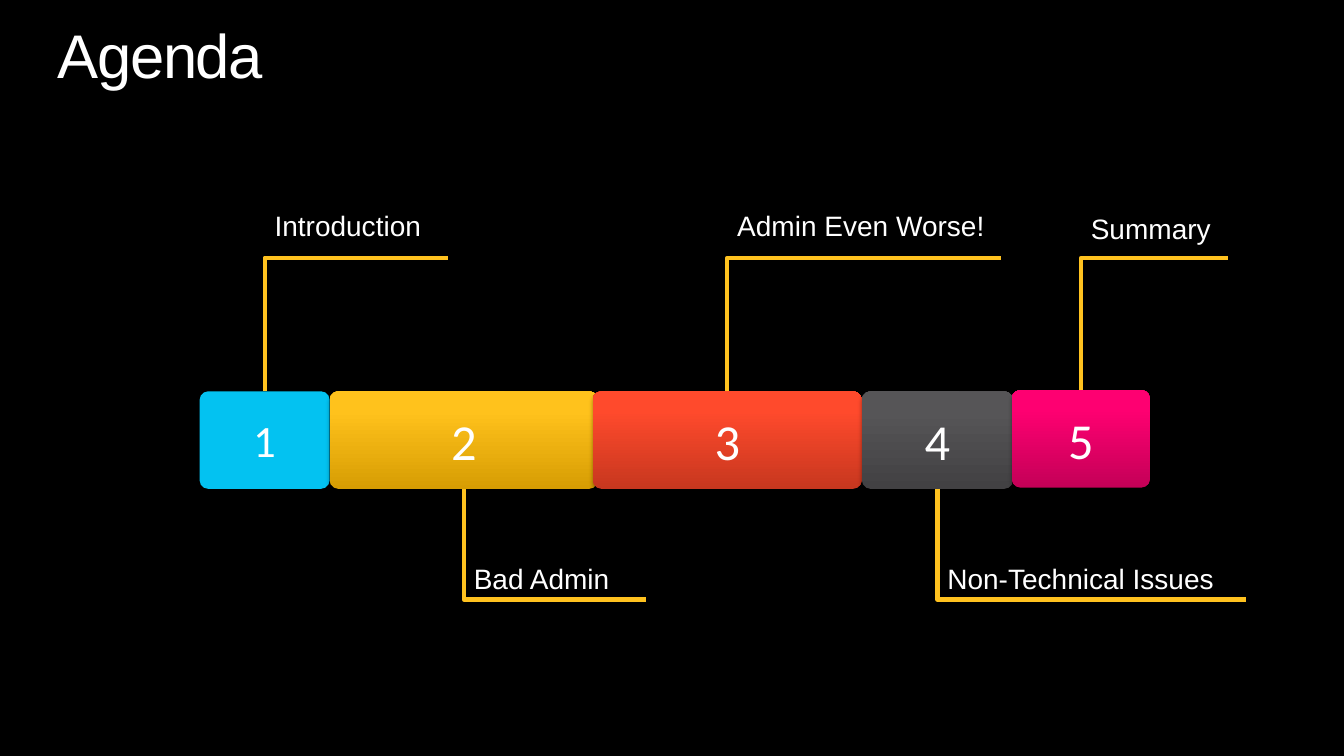
from lxml import etree
from pptx import Presentation
from pptx.dml.color import RGBColor
from pptx.enum.shapes import MSO_CONNECTOR, MSO_SHAPE
from pptx.enum.text import MSO_ANCHOR, MSO_AUTO_SIZE, PP_ALIGN
from pptx.oxml import parse_xml
from pptx.oxml.ns import nsdecls, qn
from pptx.util import Cm, Pt

ROUNDED = MSO_SHAPE.ROUNDED_RECTANGLE
ELBOW = MSO_CONNECTOR.ELBOW
CENTER, LEFT = PP_ALIGN.CENTER, PP_ALIGN.LEFT
MIDDLE, TOP = MSO_ANCHOR.MIDDLE, MSO_ANCHOR.TOP
NO_AUTOFIT = MSO_AUTO_SIZE.NONE

BLACK = RGBColor(0x00, 0x00, 0x00)
WHITE = RGBColor(0xFF, 0xFF, 0xFF)
AMBER = RGBColor(0xFF, 0xC2, 0x1F)
BLUE = RGBColor(0x03, 0xC2, 0xF1)
YELLOW = RGBColor(0xFF, 0xC2, 0x1C)
DARK_YELLOW = RGBColor(0xD7, 0x9D, 0x03)
RED = RGBColor(0xFF, 0x4A, 0x2C)
DARK_RED = RGBColor(0xC7, 0x37, 0x1F)
GREY = RGBColor(0x56, 0x55, 0x57)
DARK_GREY = RGBColor(0x42, 0x41, 0x43)
PINK = RGBColor(0xFE, 0x00, 0x71)
DARK_PINK = RGBColor(0xC4, 0x00, 0x57)

TITLE = "Agenda"
# label, left, top, width, number size, bottom colour, top colour, label top, label width, line end
AGENDA = [
    ("Introduction", 5.03, 9.86, 3.28, 32, BLUE, BLUE, 5.13, 4.6, 11.3),
    ("Bad Admin", 8.31, 9.86, 6.76, 36, DARK_YELLOW, YELLOW, 14.02, 4.06, 16.28),
    ("Admin Even Worse!", 14.94, 9.86, 6.78, 36, DARK_RED, RED, 5.13, 8.64, 25.22),
    ("Non-Technical Issues", 21.72, 9.86, 3.81, 36, DARK_GREY, GREY, 14.02, 7.26, 31.39),
    ("Summary", 25.5, 9.83, 3.48, 36, DARK_PINK, PINK, 5.21, 5, 30.94),
]
BLOCK_HEIGHT = 2.46
LABEL_HEIGHT = 1.12
UPPER_LINE, LOWER_LINE = 6.5, 15.11

SHADOW = (
    f'<a:outerShdw {nsdecls("a")} blurRad="40000" dist="23000" dir="5400000" rotWithShape="0">'
    '<a:srgbClr val="000000"><a:alpha val="35000"/></a:srgbClr></a:outerShdw>'
)


def add_text(shape, text, font_name, size, alignment):
    paragraph = shape.text_frame.paragraphs[0]
    paragraph.alignment = alignment
    run = paragraph.add_run()
    run.text = text
    run.font.name = font_name
    run.font.size = Pt(size)
    run.font.color.rgb = WHITE
    return run


def add_title(slide):
    title = slide.shapes.title
    title.left, title.top, title.width, title.height = Cm(1.45), Cm(0.64), Cm(30.96), Cm(1.7)
    frame = title.text_frame
    frame.margin_left = frame.margin_right = frame.margin_top = frame.margin_bottom = 0
    frame.vertical_anchor = TOP
    frame.auto_size = NO_AUTOFIT
    run = add_text(title, TITLE, "Arial", 44, LEFT)
    frame.paragraphs[0].line_spacing = 0.9
    run.font._element.set("spc", "-100")


def add_block(slide, number, left, top, width, size, bottom_color, top_color):
    block = slide.shapes.add_shape(ROUNDED, Cm(left), Cm(top), Cm(width), Cm(BLOCK_HEIGHT))
    block.adjustments[0] = 0.09
    if bottom_color == top_color:
        block.fill.solid()
        block.fill.fore_color.rgb = top_color
    else:
        block.fill.gradient()
        block.fill.gradient_angle = 90
        stops = block.fill.gradient_stops
        for stop, position, color in zip(stops, (0, 0.8), (bottom_color, top_color)):
            stop.position = position
            stop.color.rgb = color
    block.line.fill.background()
    block.shadow.inherit = False
    block._element.spPr.find(qn("a:effectLst")).append(parse_xml(SHADOW))
    block.text_frame.vertical_anchor = MIDDLE
    add_text(block, str(number), "Calibri", size, CENTER)


def add_callout(slide, text, center, block_top, label_top, label_width, line_end):
    above = label_top < block_top
    start_y = block_top if above else block_top + BLOCK_HEIGHT
    end_y = UPPER_LINE if above else LOWER_LINE
    connector = slide.shapes.add_connector(
        ELBOW, Cm(center), Cm(start_y), Cm(line_end), Cm(end_y))
    connector.line.color.rgb = AMBER
    connector.line.width = Pt(3)
    properties = connector._element.spPr
    guides = properties.find(qn("a:prstGeom")).find(qn("a:avLst"))
    etree.SubElement(guides, qn("a:gd"), name="adj1", fmla="val 0")
    etree.SubElement(properties, qn("a:effectLst"))

    label = slide.shapes.add_textbox(
        Cm(center), Cm(label_top), Cm(label_width), Cm(LABEL_HEIGHT))
    label.text_frame.word_wrap = True
    add_text(label, text, "Arial", 20, LEFT)


def main():
    presentation = Presentation()
    presentation.slide_width, presentation.slide_height = Cm(33.87), Cm(19.05)
    slide = presentation.slides.add_slide(presentation.slide_layouts[5])
    slide.background.fill.solid()
    slide.background.fill.fore_color.rgb = BLACK
    add_title(slide)
    for number, (_, left, top, width, size, bottom_color, top_color, *_) in enumerate(AGENDA, 1):
        add_block(slide, number, left, top, width, size, bottom_color, top_color)
    for text, left, top, width, _, _, _, label_top, label_width, line_end in AGENDA:
        add_callout(slide, text, left + width / 2, top, label_top, label_width, line_end)
    presentation.save("out.pptx")


if __name__ == "__main__":
    main()
